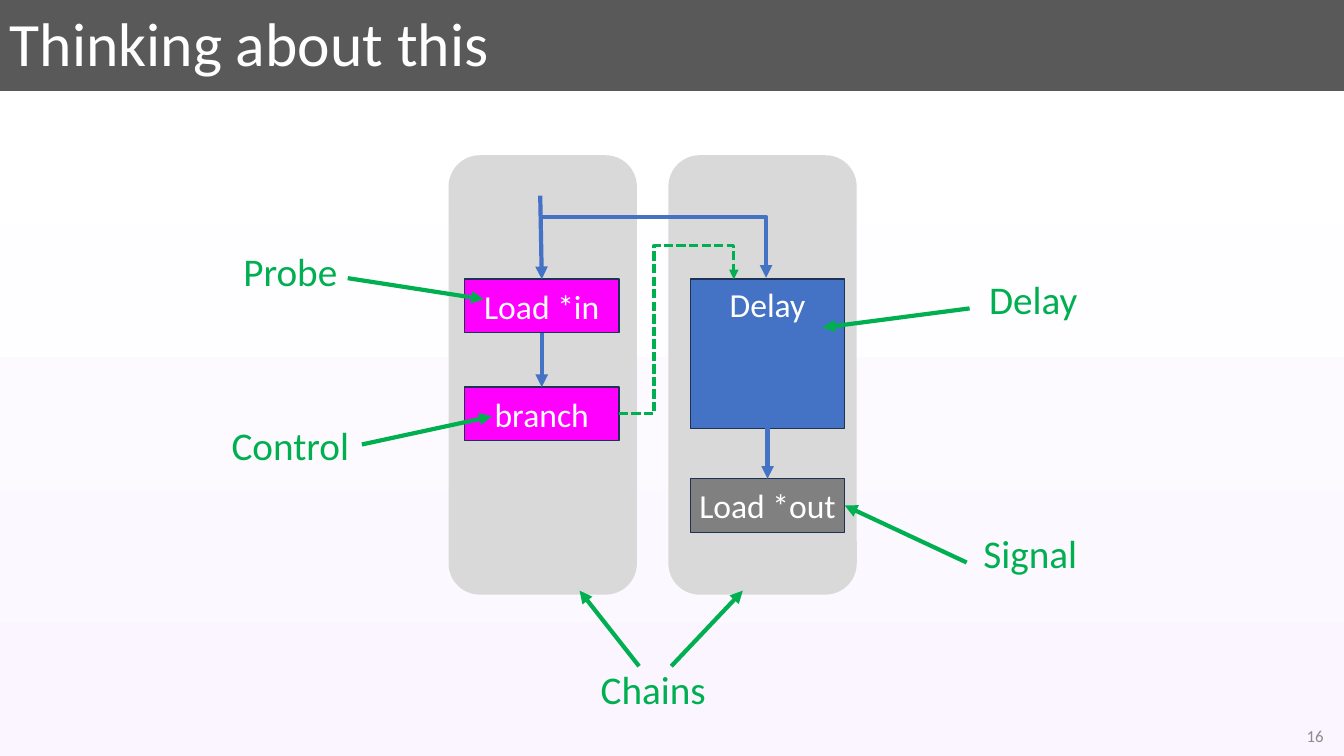
from dataclasses import dataclass

from lxml.etree import SubElement
from pptx import Presentation
from pptx.dml.color import RGBColor
from pptx.enum.dml import MSO_LINE
from pptx.enum.shapes import MSO_CONNECTOR, MSO_SHAPE
from pptx.enum.text import MSO_ANCHOR, PP_ALIGN
from pptx.oxml.ns import qn
from pptx.util import Pt


@dataclass(frozen=True)
class Theme:
    font: str = "Calibri"
    header: str = "595959"
    page_top: str = "FFFFFF"
    page_bottom: str = "FAF5FF"
    white: str = "FFFFFF"
    number: str = "8C8C8C"
    chain: str = "D9D9D9"
    probe: str = "FF00FF"
    flow: str = "4472C4"
    signal: str = "808080"
    outline: str = "1E3256"
    note: str = "00B050"
    title_size: float = 44
    note_size: float = 28
    step_size: float = 24
    number_size: float = 12


THEME = Theme()
WIDTH, HEIGHT = 960, 540
TOP, RIGHT, BOTTOM = 0, 3, 2
STEP_W, STEP_H = 110.2, 38.2


def rgb(value):
    return RGBColor.from_string(value)


def write(shape, text, size, color=THEME.white, align=PP_ALIGN.CENTER,
          anchor=MSO_ANCHOR.MIDDLE, side_inset=7.2, line_spacing=None):
    frame = shape.text_frame
    frame.word_wrap = True
    frame.vertical_anchor = anchor
    frame.margin_left = frame.margin_right = Pt(side_inset)
    frame.margin_top = frame.margin_bottom = Pt(3.6)
    paragraph = frame.paragraphs[0]
    paragraph.text = text
    paragraph.alignment = align
    paragraph.line_spacing = line_spacing
    font = paragraph.font
    font.name, font.size = THEME.font, Pt(size)
    font.color.rgb = rgb(color)


def add_text(slide, box, text, size, **style):
    write(slide.shapes.add_textbox(*map(Pt, box)), text, size, **style)


def add_block(slide, kind, box, fill, outline=None):
    block = slide.shapes.add_shape(kind, *map(Pt, box))
    block.shadow.inherit = False
    block.fill.solid()
    block.fill.fore_color.rgb = rgb(fill)
    if outline:
        block.line.color.rgb = rgb(outline)
        block.line.width = Pt(1)
    else:
        block.line.fill.background()
    return block


def add_step(slide, box, text, fill, **style):
    step = add_block(slide, MSO_SHAPE.RECTANGLE, box, fill, THEME.outline)
    write(step, text, THEME.step_size, **style)
    return step


def style_arrow(arrow, color, width, dash=None):
    arrow.line.color.rgb = rgb(color)
    arrow.line.width = Pt(width)
    if dash:
        arrow.line.dash_style = dash
    outline = arrow.element.xpath(".//a:ln")[0]
    SubElement(outline, qn("a:tailEnd"), type="triangle")


def add_arrow(slide, start, end, color):
    """Draw a straight arrow; an end is a point or a (shape, side) pair."""
    arrow = slide.shapes.add_connector(MSO_CONNECTOR.STRAIGHT, 0, 0, 0, 0)
    if isinstance(start[0], (int, float)):
        arrow.begin_x, arrow.begin_y = map(Pt, start)
    else:
        arrow.begin_connect(*start)
    if isinstance(end[0], (int, float)):
        arrow.end_x, arrow.end_y = map(Pt, end)
    else:
        arrow.end_connect(*end)
    SubElement(arrow.element.spPr, qn("a:effectLst"))
    style_arrow(arrow, color, 3)


def add_bent_arrow(slide, points, color, width, dash=None):
    first, *rest = [(Pt(x), Pt(y)) for x, y in points]
    builder = slide.shapes.build_freeform(*first)
    builder.add_line_segments(rest, close=False)
    arrow = builder.convert_to_shape()
    arrow.shadow.inherit = False
    arrow.fill.background()
    style_arrow(arrow, color, width, dash)


def paint_background(slide):
    fill = slide.background.fill
    fill.gradient()
    fill.gradient_angle = 270
    stops = slide.element.xpath(".//p:bg//a:gsLst")[0]
    for stop in list(stops):
        stops.remove(stop)
    for percent, color in ((0, THEME.header), (12, THEME.header),
                           (12, THEME.page_top), (100, THEME.page_bottom)):
        stop = SubElement(stops, qn("a:gs"), pos=str(percent * 1000))
        SubElement(stop, qn("a:srgbClr"), val=color)


def draw_header(slide, box):
    add_text(slide, box, "Thinking about this", THEME.title_size,
             align=PP_ALIGN.LEFT, line_spacing=0.9)


def draw_page_number(slide, box):
    add_text(slide, box, "16", THEME.number_size, color=THEME.number,
             align=PP_ALIGN.RIGHT)


def draw_chains(slide, box):
    """Draw both chains with their steps and return the Load *out step."""
    left, top, width, height = box
    chain_w = 134.6
    for chain_x in (left, left + width - chain_w):
        add_block(slide, MSO_SHAPE.ROUNDED_RECTANGLE,
                  (chain_x, top, chain_w, height), THEME.chain)

    probe_x, delay_x = left + 11.5, left + 172.8
    row_y, branch_y = top + 88.5, top + 165.6
    load_in = add_step(slide, (probe_x, row_y, STEP_W, STEP_H),
                       "Load *in", THEME.probe)
    delay = add_step(slide, (delay_x, row_y, STEP_W, 106.6),
                     "Delay", THEME.flow, anchor=MSO_ANCHOR.TOP)
    load_out = add_step(slide, (delay_x, top + 231.1, STEP_W, STEP_H),
                        "Load *out", THEME.signal, side_inset=2.9)
    branch = add_step(slide, (probe_x, branch_y, STEP_W, STEP_H),
                      "branch", THEME.probe)

    entry_x, fork_y = left + 65.5, top + 44
    add_arrow(slide, (entry_x, top + 28.8), (load_in, TOP), THEME.flow)
    add_arrow(slide, (load_in, BOTTOM), (branch, TOP), THEME.flow)
    add_arrow(slide, (delay, BOTTOM), (load_out, TOP), THEME.flow)
    delay_entry_x = delay_x + 54
    add_bent_arrow(slide, [(entry_x, fork_y), (delay_entry_x, fork_y),
                           (delay_entry_x, row_y - 1)], THEME.flow, 3)

    branch_mid = branch_y + STEP_H / 2
    gap_x, control_x, over_y = left + 146.8, delay_x + 31, top + 64.6
    add_bent_arrow(slide, [(probe_x + STEP_W, branch_mid), (gap_x, branch_mid),
                           (gap_x, over_y), (control_x, over_y),
                           (control_x, row_y)],
                   THEME.note, 2.25, MSO_LINE.SQUARE_DOT)
    return load_out


def draw_callout(slide, box, text, *arrows):
    """Draw a label; each arrow is an offset from the box and a target."""
    left, top = box[:2]
    add_text(slide, box, text, THEME.note_size, color=THEME.note,
             anchor=MSO_ANCHOR.TOP)
    for (dx, dy), target in arrows:
        add_arrow(slide, (left + dx, top + dy), target, THEME.note)


def main():
    deck = Presentation()
    deck.slide_width, deck.slide_height = Pt(WIDTH), Pt(HEIGHT)
    slide = deck.slides.add_slide(deck.slide_layouts[6])
    paint_background(slide)
    draw_header(slide, (0, 0, 952.6, 66.2))
    draw_page_number(slide, (736.6, 511.2, 216, 28.8))
    load_out = draw_chains(slide, (320.4, 110.9, 291.6, 313.9))
    callouts = (
        (402.5, 471.6, "Chains", ((54, 4.3), (414, 421.9)),
         ((77, 4.3), (530.6, 421.9))),
        (671.8, 374.4, "Signal", ((18.7, 27.4), (load_out, RIGHT))),
        (143.3, 172.8, "Probe", ((105.1, 25.9), (345.6, 213.8))),
        (143.3, 297.4, "Control", ((115.2, 20.1), (351.4, 297.4))),
        (673.9, 193, "Delay", ((18.7, 27.3), (587.5, 234))),
    )
    for left, top, text, *arrows in callouts:
        draw_callout(slide, (left, top, 128.2, 41), text, *arrows)
    deck.save("out.pptx")


if __name__ == "__main__":
    main()
